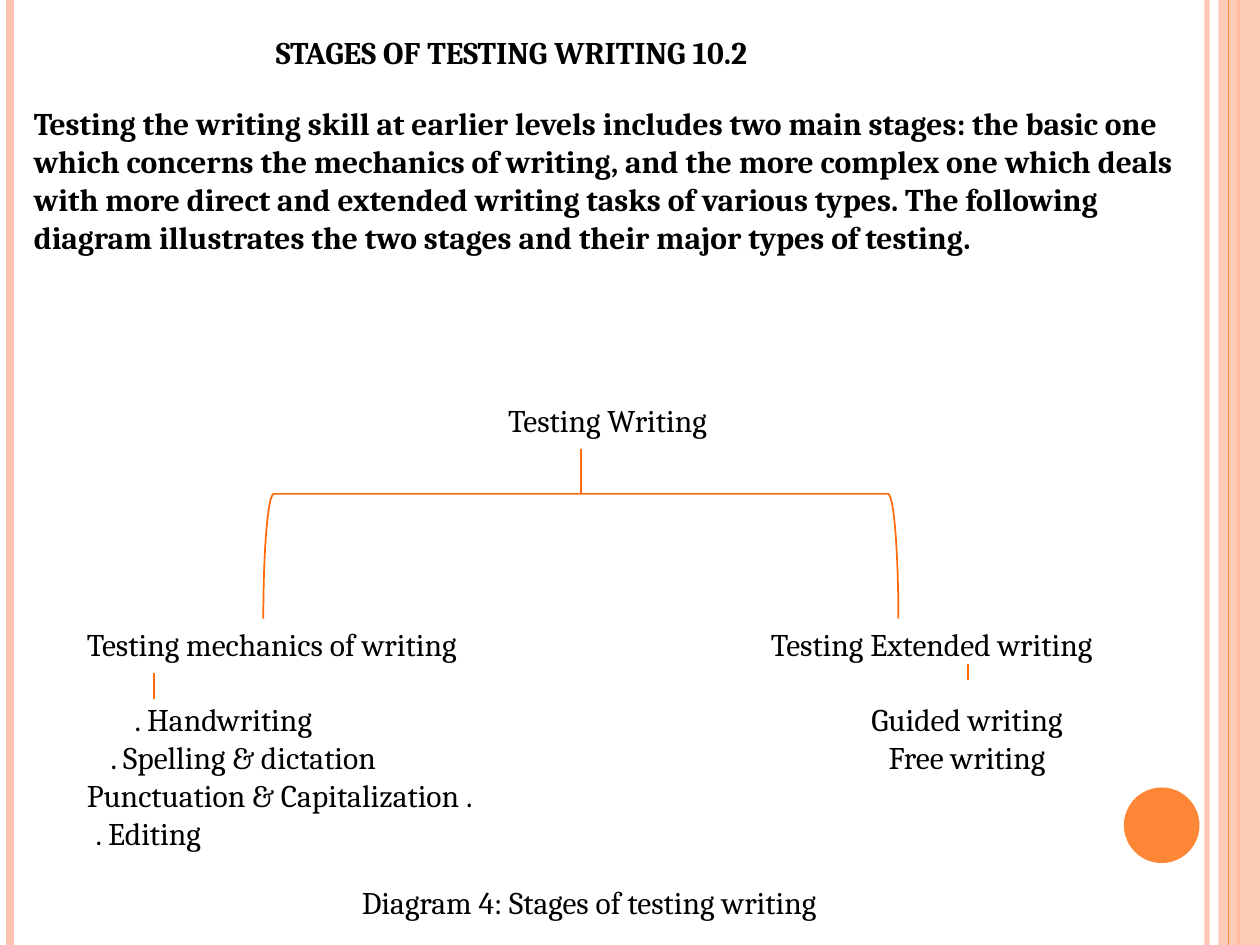
from dataclasses import dataclass

from lxml import etree
from pptx import Presentation
from pptx.dml.color import RGBColor
from pptx.enum.shapes import MSO_CONNECTOR, MSO_SHAPE
from pptx.enum.text import MSO_ANCHOR, MSO_AUTO_SIZE, PP_ALIGN
from pptx.oxml.ns import qn
from pptx.util import Inches, Pt

LEFT, MID, RIGHT = PP_ALIGN.LEFT, PP_ALIGN.CENTER, PP_ALIGN.RIGHT
TOP = MSO_ANCHOR.TOP
FIXED = MSO_AUTO_SIZE.NONE
STRAIGHT = MSO_CONNECTOR.STRAIGHT
RECT, OVAL, BRACKET = MSO_SHAPE.RECTANGLE, MSO_SHAPE.OVAL, MSO_SHAPE.RIGHT_BRACKET

COLS, ROWS = 10, 7.5
WIDTH, HEIGHT = Inches(10), Inches(7.5)


@dataclass(frozen=True)
class Theme:
    font: str = "Cambria"
    size: float = 18
    gap: float = 21.5
    ink: str = "000000"
    paper: str = "FFFFFF"
    pale: str = "FEC3AE"
    warm: str = "FE8637"
    tree: str = "FF6B0A"


THEME = Theme()


def span(x, y):
    """Turn columns and rows into slide lengths."""
    return round(WIDTH * x / COLS), round(HEIGHT * y / ROWS)


def place(x, y, w, h):
    return *span(x, y), *span(w, h)


def color(name):
    return RGBColor.from_string(name)


def fade(part, share):
    tint = next(part.iter(qn("a:srgbClr")))
    etree.SubElement(tint, qn("a:alpha"), val=str(share * 1000))


def rule(slide, start, end, tint, weight):
    line = slide.shapes.add_connector(STRAIGHT, *span(*start), *span(*end))
    line.line.color.rgb = color(tint)
    line.line.width = Pt(weight)
    etree.SubElement(line._element.spPr, qn("a:effectLst"))
    return line


def solid(slide, kind, box, tint):
    shape = slide.shapes.add_shape(kind, *place(*box))
    shape.shadow.inherit = False
    shape.fill.solid()
    shape.fill.fore_color.rgb = color(tint)
    shape.line.fill.background()
    return shape


def write(frame, rows, bold=False):
    """Fill a frame; each row is text, alignment, indent and space before."""
    frame.word_wrap = True
    frame.auto_size = FIXED
    frame.vertical_anchor = TOP
    for i, (text, align, indent, before) in enumerate(rows):
        para = frame.add_paragraph() if i else frame.paragraphs[0]
        para.alignment = align
        para.space_before = Pt(before)
        para._p.get_or_add_pPr().set("marL", str(Inches(indent)))
        run = para.add_run()
        run.text = text
        run.font.name = THEME.font
        run.font.size = Pt(THEME.size)
        run.font.bold = bold
        run.font.color.rgb = color(THEME.ink)


def label(slide, box, rows, bold=False):
    write(slide.shapes.add_textbox(*place(*box)).text_frame, rows, bold)


def frame_edges(slide, box):
    x, y, w, h = box

    def edge(at, tint, weight):
        return rule(slide, (x + at, y), (x + at, y + h), tint, weight)

    fade(edge(w - 0.42, THEME.pale, 3)._element, 93)
    edge(0.08, THEME.pale, 4.5)
    edge(w - 0.17, THEME.warm, 1.5)
    fade(solid(slide, RECT, (x + w - 0.33, y, 0.33, h), THEME.pale)._element, 87)
    edge(w - 0.25, THEME.warm, 0.75)
    solid(slide, OVAL, (x + w - 1.08, y + h - 1.25, 0.6, 0.6), THEME.warm)


def title(slide, box, text):
    head = slide.shapes.title
    head.left, head.top, head.width, head.height = place(*box)
    write(head.text_frame, [(text, LEFT, 0, 0)], bold=True)


def fork(slide, box):
    """Draw the stem and the bracket that opens downward."""
    x, y, w, h = box
    stem = 0.36
    mid, deep = x + w / 2, h - stem
    turned = (mid - deep / 2, y + stem + deep / 2 - w / 2, deep, w)
    arms = slide.shapes.add_shape(BRACKET, *place(*turned))
    arms.rotation = 270
    arms.shadow.inherit = False
    arms.fill.background()
    arms.line.color.rgb = color(THEME.tree)
    arms.line.width = Pt(1)
    rule(slide, (mid, y), (mid, y + stem), THEME.tree, 1)


def branch(slide, box, head, items, tick):
    """Write a stage and its test types; tick is offset, top and length."""
    x, y, w, h = box
    rows = [(head, LEFT, 0, 0)]
    for i, (text, align, indent) in enumerate(items):
        rows.append((text, align, indent, 0 if i else THEME.gap))
    label(slide, box, rows)
    dx, dy, size = tick
    rule(slide, (x + dx, y + dy), (x + dx, y + dy + size), THEME.tree, 1)


def diagram(slide, box):
    x, y, w, h = box
    label(slide, (x + 2.68, y, 2.44, 0.4), [("Testing Writing", RIGHT, 0, 0)])
    fork(slide, (x + 1.5, y + 0.43, 5.04, 1.35))
    low = y + 1.78
    branch(slide, (x, low, 4.01, 1.92), "Testing mechanics of writing", [
        (". Handwriting", LEFT, 0.38),
        (". Spelling & dictation", LEFT, 0.19),
        ("Punctuation & Capitalization .", LEFT, 0),
        (". Editing", LEFT, 0.07),
    ], (0.63, 0.43, 0.21))
    branch(slide, (x + w - 3.31, low, 3.31, 1.31), "Testing Extended writing", [
        ("Guided writing", MID, 0),
        ("Free writing", MID, 0),
    ], (1.66, 0.36, 0.13))
    label(slide, (x + 1.5, y + h - 0.4, 4.49, 0.4),
          [("Diagram 4: Stages of testing writing", RIGHT, 0, 0)])


def main():
    deck = Presentation()
    deck.slide_width, deck.slide_height = WIDTH, HEIGHT
    slide = deck.slides.add_slide(deck.slide_layouts[5])
    slide.background.fill.solid()
    slide.background.fill.fore_color.rgb = color(THEME.paper)
    frame_edges(slide, (0, 0, COLS, ROWS))
    title(slide, (2.09, 0.21, 5.04, 0.4), "STAGES OF TESTING WRITING 10.2")
    intro = (
        "Testing the writing skill at earlier levels includes two main stages: "
        "the basic one which concerns the mechanics of writing, and the more "
        "complex one which deals with more direct and extended writing tasks of "
        "various types. The following diagram illustrates the two stages and "
        "their major types of testing."
    )
    label(slide, (0.17, 0.78, 9.29, 3.13), [(intro, LEFT, 0, 0)], bold=True)
    diagram(slide, (0.59, 3.13, 8.74, 4.23))
    deck.save("out.pptx")


if __name__ == "__main__":
    main()
